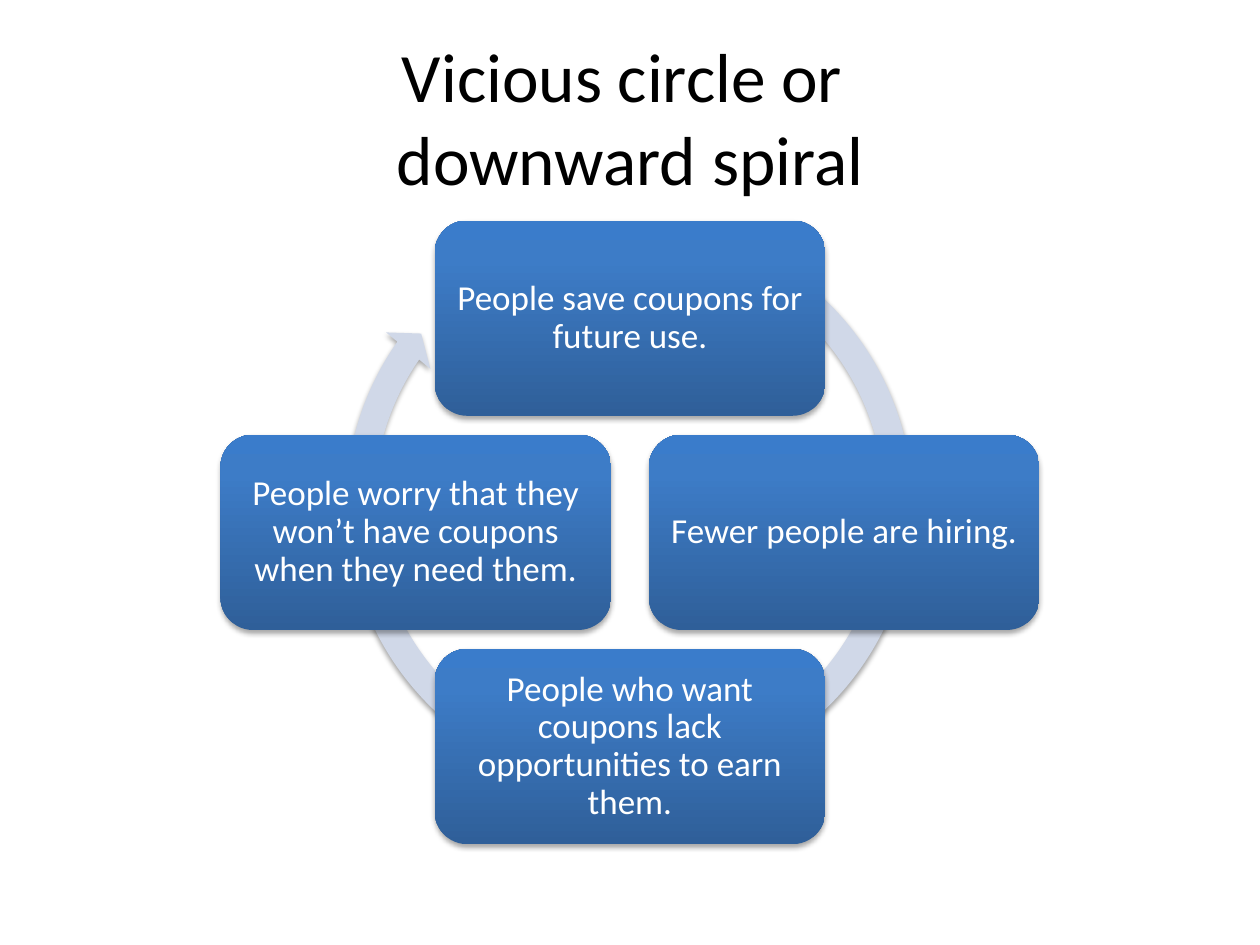
from dataclasses import dataclass

from lxml.etree import SubElement
from pptx import Presentation
from pptx.dml.color import RGBColor as RGB
from pptx.enum.shapes import MSO_SHAPE as SHAPE
from pptx.enum.text import MSO_ANCHOR as ANCHOR, PP_ALIGN as ALIGN
from pptx.oxml.ns import qn
from pptx.util import Inches, Pt


@dataclass(frozen=True)
class Theme:
    font: str = "Calibri"
    title_size: float = 39.6
    box_size: float = 20
    title_color: str = "000000"
    box_text: str = "FFFFFF"
    ring: str = "D0D8E8"
    shadow: str = "000000"
    # Gradient stops (percent, colour), from bottom to top
    box_stops: tuple = ((0, "2F5F99"), (80, "3D7CC7"), (100, "3A7CCB"))


class SlideBuilder:
    def __init__(self, slide, theme):
        self.s = slide
        self.theme = theme

    def _frame(self, sp, inset):
        tf = sp.text_frame
        tf.word_wrap = True
        tf.vertical_anchor = ANCHOR.MIDDLE
        tf.margin_left = tf.margin_right = Inches(inset)
        tf.margin_top = tf.margin_bottom = Inches(inset)
        p = tf.paragraphs[0]
        p.alignment = ALIGN.CENTER
        return p

    def _run(self, p, text, size, color):
        r = p.add_run()
        r.text = text
        r.font.name = self.theme.font
        r.font.size = Pt(size)
        r.font.color.rgb = RGB.from_string(color)

    def _shadow(self, sp):
        sp.shadow.inherit = False
        effects = sp._element.spPr.find(qn("a:effectLst"))
        outer = SubElement(effects, qn("a:outerShdw"), blurRad=str(Pt(3.1)),
                           dist=str(Pt(1.8)), dir="5400000", rotWithShape="0")
        clr = SubElement(outer, qn("a:srgbClr"), val=self.theme.shadow)
        SubElement(clr, qn("a:alpha"), val="35000")

    def _gradient(self, sp):
        sp.fill.gradient()
        sp.fill.gradient_angle = 90
        stops = sp._element.spPr.find(qn("a:gradFill")).find(qn("a:gsLst"))
        for old in list(stops):
            stops.remove(old)
        for percent, color in self.theme.box_stops:
            gs = SubElement(stops, qn("a:gs"), pos=str(percent * 1000))
            SubElement(gs, qn("a:srgbClr"), val=color)

    def title(self, lines, x, y, w, h):
        sp = self.s.shapes.add_textbox(Inches(x), Inches(y), Inches(w), Inches(h))
        p = self._frame(sp, 0.05)
        for i, line in enumerate(lines):
            if i:
                p.add_line_break()
            self._run(p, line, self.theme.title_size, self.theme.title_color)

    def ring(self, x, y, size, adjustments):
        sp = self.s.shapes.add_shape(SHAPE.CIRCULAR_ARROW, Inches(x), Inches(y),
                                     Inches(size), Inches(size))
        for i, value in enumerate(adjustments):
            sp.adjustments[i] = value
        sp.fill.solid()
        sp.fill.fore_color.rgb = RGB.from_string(self.theme.ring)
        sp.line.fill.background()
        self._shadow(sp)

    def box(self, text, cx, cy, w, h):
        sp = self.s.shapes.add_shape(SHAPE.ROUNDED_RECTANGLE, Inches(cx - w / 2),
                                     Inches(cy - h / 2), Inches(w), Inches(h))
        self._gradient(sp)
        sp.line.fill.background()
        self._shadow(sp)
        p = self._frame(sp, 0.08)
        p.line_spacing = 0.9
        self._run(p, text, self.theme.box_size, self.theme.box_text)


def main():
    prs = Presentation()
    prs.slide_width, prs.slide_height = Inches(10), Inches(7.5)
    slide = SlideBuilder(prs.slides.add_slide(prs.slide_layouts[6]), Theme())

    # Title
    slide.title(["Vicious circle or ", "downward spiral"], 0.5, 0.3, 9, 1.25)

    # Ring arrow behind the boxes
    slide.ring(2.63, 1.64, 4.73, (0.047, 2.729, 128.918, 179.897, 0.048))

    # Steps of the cycle, clockwise from the top, as (x, y) directions
    steps = [
        (0, -1, "People save coupons for future use."),
        (1, 0, "Fewer people are hiring."),
        (0, 1, "People who want coupons lack opportunities to earn them."),
        (-1, 0, "People worry that they won’t have coupons when they need them."),
    ]
    center_x, center_y, radius = 5, 4.225, 1.7
    for dx, dy, text in steps:
        slide.box(text, center_x + dx * radius, center_y + dy * radius, 3.1, 1.55)

    prs.save("out.pptx")


if __name__ == "__main__":
    main()
